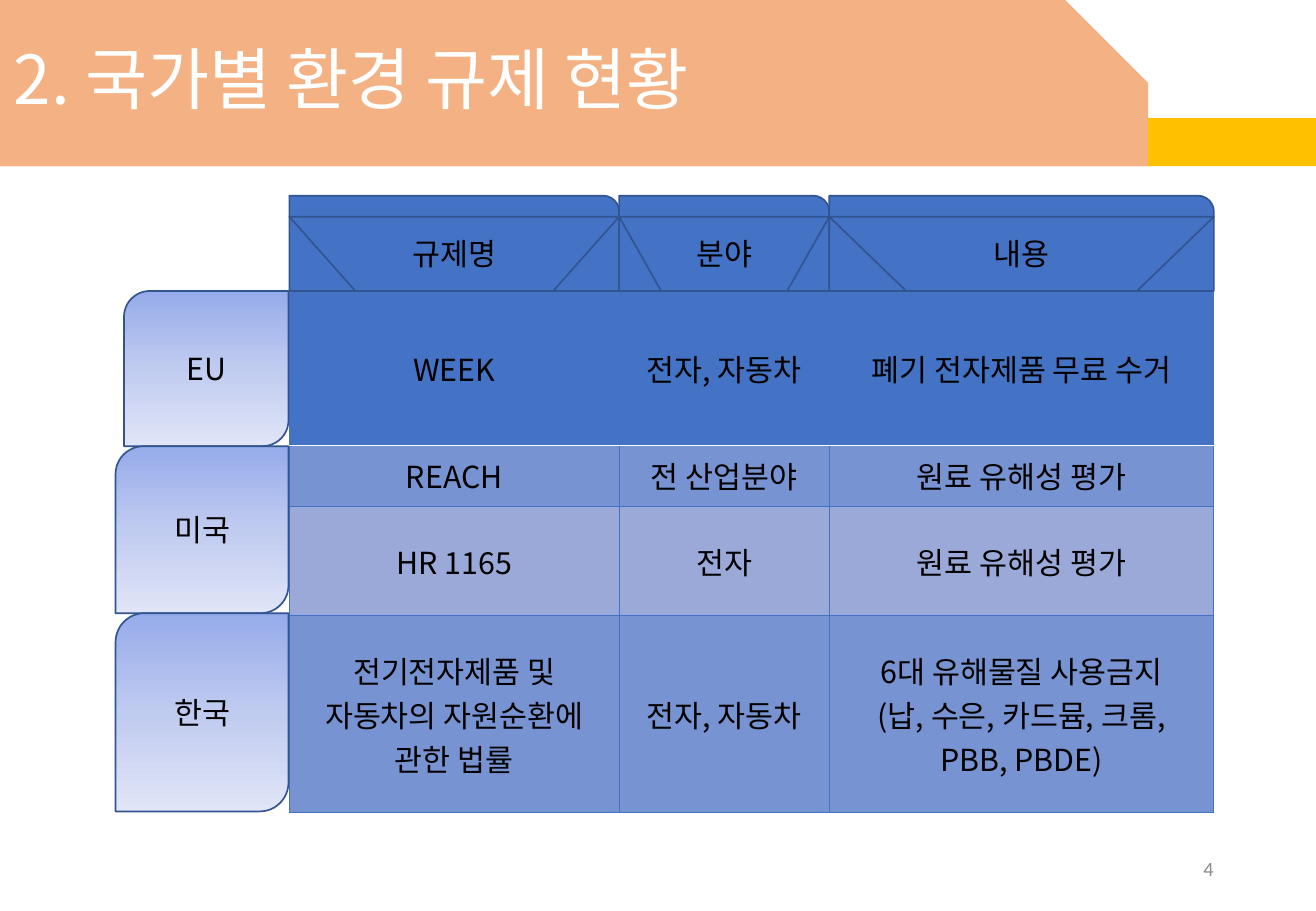
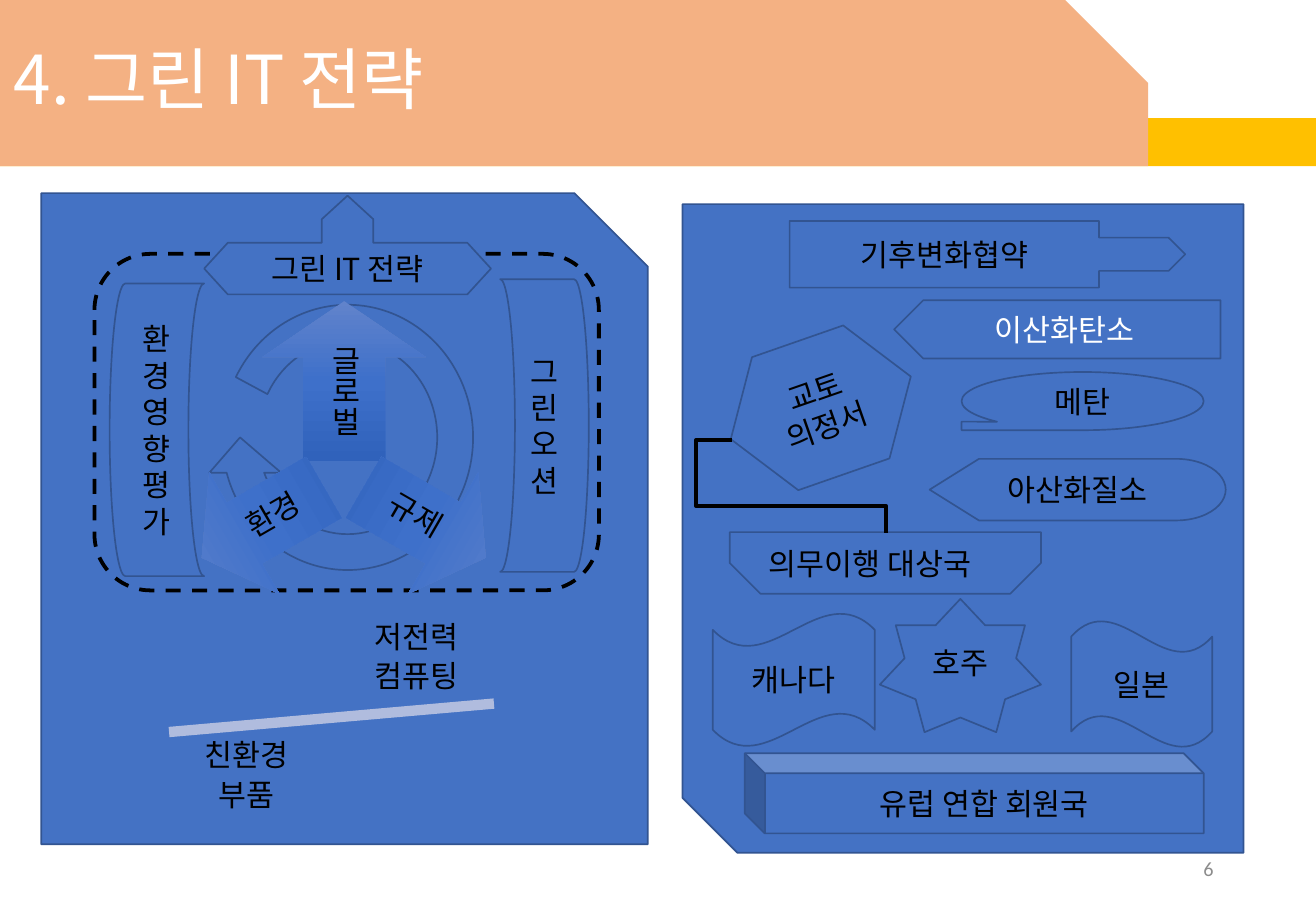
from copy import deepcopy
from itertools import accumulate

from lxml import etree
from pptx import Presentation
from pptx.dml.color import RGBColor
from pptx.enum.dml import MSO_LINE
from pptx.enum.shapes import MSO_CONNECTOR, MSO_SHAPE
from pptx.enum.text import MSO_ANCHOR, MSO_AUTO_SIZE, PP_ALIGN
from pptx.oxml.ns import qn
from pptx.util import Pt

LEFT, CENTER, RIGHT = PP_ALIGN.LEFT, PP_ALIGN.CENTER, PP_ALIGN.RIGHT
TOP, MIDDLE = MSO_ANCHOR.TOP, MSO_ANCHOR.MIDDLE
DASH = MSO_LINE.DASH
RECT, ROUNDED = MSO_SHAPE.RECTANGLE, MSO_SHAPE.ROUNDED_RECTANGLE
SNIP, SNIP_SAME = MSO_SHAPE.SNIP_1_RECTANGLE, MSO_SHAPE.SNIP_2_SAME_RECTANGLE
ROUND_ONE, ROUND_DIAG = MSO_SHAPE.ROUND_1_RECTANGLE, MSO_SHAPE.ROUND_2_DIAG_RECTANGLE
TRAPEZOID = MSO_SHAPE.FLOWCHART_MANUAL_OPERATION
STORAGE, TAPE = MSO_SHAPE.FLOWCHART_STORED_DATA, MSO_SHAPE.FLOWCHART_SEQUENTIAL_ACCESS_STORAGE
DISPLAY, CUBE, WAVE = MSO_SHAPE.FLOWCHART_DISPLAY, MSO_SHAPE.CUBE, MSO_SHAPE.WAVE
STAR, HEXAGON, HOME_PLATE = MSO_SHAPE.STAR_7_POINT, MSO_SHAPE.HEXAGON, MSO_SHAPE.PENTAGON
UP, DOWN, MINUS = MSO_SHAPE.UP_ARROW, MSO_SHAPE.DOWN_ARROW, MSO_SHAPE.MATH_MINUS
TRIPLE, CIRCULAR = MSO_SHAPE.LEFT_RIGHT_UP_ARROW, MSO_SHAPE.CIRCULAR_ARROW
CALLOUT = MSO_SHAPE.RIGHT_ARROW_CALLOUT
ELBOW = MSO_CONNECTOR.ELBOW

KR, LATIN = "Noto Sans CJK KR", "Calibri"
BLUE, EDGE, BLACK, WHITE = "4472C4", "325491", "000000", "FFFFFF"
ORANGE, YELLOW, GREY, PALE = "F4B183", "FFC000", "8C8C8C", "B0BCDE"
TAB_GRADIENT = ("96ABEA", "C0CBF0", "E0E5F7")
ARROW_GRADIENT = ("6183CB", "3E70CA", "3062BB")

# Regulation table
HEADERS = ["규제명", "분야", "내용"]
REGULATIONS = [
    ["WEEK", "전자, 자동차", "폐기 전자제품 무료 수거"],
    ["REACH", "전 산업분야", "원료 유해성 평가"],
    ["HR 1165", "전자", "원료 유해성 평가"],
    ["전기전자제품 및 자동차의 자원순환에 관한 법률", "전자, 자동차",
     "6대 유해물질 사용금지\n(납, 수은, 카드뮴, 크롬, PBB, PBDE)"],
]
ROW_FILLS = [BLUE, "7893D1", "9BA9D9", "7893D1"]
COL_WIDTHS = [195.5, 124.5, 228]
ROW_HEIGHTS = [91.5, 36, 65, 116.5]
TABLE_X, TABLE_Y = 171.5, 172.5
COUNTRIES = [("EU", 97.5, 92), ("미국", 102.5, 99), ("한국", 102.5, 117.5)]

# Strategy panels: shape, left, top, width, height, text, format
GLOBAL_ARROW = dict(fill=ARROW_GRADIENT, line=None, adj=(0.5, 0.35))
STRATEGY = [
    (SNIP, 24.5, 114.5, 359.5, 386, "", dict(adj=(0.121,))),
    (ROUNDED, 56, 150.5, 299, 199.5, "", dict(line=BLACK, width=2.25, dash=DASH)),
    (TRIPLE, 121, 116, 170, 58.5, "그린 IT 전략", dict(adj=(0.522, 0.261, 0.239))),
    (MINUS, 65, 412.5, 263, 26, "", dict(fill=PALE, line=None, rot=355)),
    (DOWN, 96, 371, 79, 49, "", dict(line=None)),
    (UP, 217.5, 431.5, 79, 49, "", dict(line=None)),
    (STORAGE, 65, 168, 56, 173.5, "환경영향평가", {}),
    (STORAGE, 296.5, 165.5, 52.5, 173.5, "그린오션", dict(flip="flipH")),
    (CIRCULAR, 121, 170, 170, 178.5, "",
     dict(rot=180, adj=(0.125, 11.423, 204.577, 17.002, 0.125))),
    (UP, 155.5, 178.5, 97, 95, "", GLOBAL_ARROW),
    (UP, 210, 268, 83.5, 83.5, "", dict(GLOBAL_ARROW, rot=120)),
    (UP, 114, 268, 83.5, 83.5, "", dict(GLOBAL_ARROW, rot=240)),
]
STRATEGY_LABELS = [
    (204.5, 364.5, 85, 51, "저전력\n컴퓨팅", {}),
    (103.5, 435, 85, 51, "친환경\n부품", {}),
    (179, 195, 49, 78.5, "글로벌", dict(vert="eaVert")),
    (211.5, 285, 69, 42, "규제", dict(rot=30)),
    (127.5, 285, 69, 42, "환경", dict(rot=330)),
]
CLIMATE = [
    (SNIP, 404.5, 121, 332.5, 384.5, "", dict(rot=180, adj=(0.098,))),
    (CALLOUT, 468, 131, 234.5, 39.5, "기후변화협약", dict(adj=(0.5, 0.25, 0.25, 0.782))),
    (HOME_PLATE, 530, 178, 193.5, 34.5, "이산화탄소", dict(flip="flipH", color=WHITE)),
    (HEXAGON, 430, 200, 113, 83.5, "교토\n의정서", dict(rot=340.8, adj=(0.334,))),
    (SNIP_SAME, 432.5, 315.5, 184.5, 36.5, "", dict(flip="flipV", adj=(0.5, 0))),
    (TAPE, 570, 220.5, 143.5, 34.5, "메탄", dict(flip="flipH")),
    (DISPLAY, 551, 272, 175.5, 36.5, "아산화질소", {}),
    (STAR, 521.5, 355, 95.5, 79, "호주", {}),
    (WAVE, 635, 368, 83.5, 75, "일본", {}),
    (WAVE, 422.5, 363.5, 96, 79, "캐나다", dict(flip="flipH")),
    (CUBE, 441.5, 446.5, 272, 47.5, "유럽 연합 회원국", dict(flip="flipH")),
]


def rgb(hex_color):
    return RGBColor.from_string(hex_color)


def pts(*values):
    return [Pt(v) for v in values]


def write(tf, text, size=18, color=BLACK, font=KR, align=CENTER, anchor=MIDDLE,
          spacing=None, after=None):
    """Fill a text frame, one paragraph for each line of text."""
    tf.vertical_anchor = anchor
    for i, line in enumerate(text.split("\n")):
        p = tf.add_paragraph() if i else tf.paragraphs[0]
        p.alignment = align
        if spacing:
            p.line_spacing = spacing
        if after:
            p.space_after = Pt(after)
        r = p.add_run()
        r.text = line
        r.font.size, r.font.name, r.font.bold = Pt(size), font, False
        r.font.color.rgb = rgb(color)
        etree.SubElement(r.font._element, qn("a:ea")).set("typeface", font)


def paint(sp, fill):
    """Fill with one colour, or with a top-to-bottom gradient of three."""
    if isinstance(fill, str):
        sp.fill.solid()
        sp.fill.fore_color.rgb = rgb(fill)
        return
    sp.fill.gradient()
    sp.fill.gradient_angle = 270
    stops = next(sp.element.iter(qn("a:gsLst")))
    stops.append(deepcopy(stops[0]))
    for i, (stop, color) in enumerate(zip(sp.fill.gradient_stops, fill)):
        stop.position = i / 2
        stop.color.rgb = rgb(color)


def draw(shapes, kind, x, y, w, h, text="", fill=BLUE, line=EDGE, width=1, dash=None,
         adj=(), rot=0, flip=None, **fmt):
    sp = shapes.add_shape(kind, *pts(x, y, w, h))
    sp.shadow.inherit = False
    paint(sp, fill)
    if line:
        sp.line.color.rgb = rgb(line)
        sp.line.width = Pt(width)
        if dash:
            sp.line.dash_style = dash
    else:
        sp.line.fill.background()
    for i, value in enumerate(adj):
        sp.adjustments[i] = value
    sp.rotation = rot
    if flip:
        sp.element.spPr.find(qn("a:xfrm")).set(flip, "1")
    if text:
        write(sp.text_frame, text, **fmt)
    return sp


def label(shapes, x, y, w, h, text, inset=None, rot=0, vert=None, wrap=True, **fmt):
    sp = shapes.add_textbox(*pts(x, y, w, h))
    sp.rotation = rot
    tf = sp.text_frame
    tf.word_wrap = wrap
    tf.auto_size = MSO_AUTO_SIZE.NONE if wrap else MSO_AUTO_SIZE.SHAPE_TO_FIT_TEXT
    if inset:
        tf.margin_left = tf.margin_right = tf.margin_top = tf.margin_bottom = Pt(inset)
    if vert:
        tf._txBody.find(qn("a:bodyPr")).set("vert", vert)
    write(tf, text, **fmt)


def add_bands(layout, s):
    """Draw the header bands and place them behind the layout's placeholders."""
    bands = [draw(s.shapes, RECT, 0, 70, 780, 28.5, fill=YELLOW, line=None),
             draw(s.shapes, SNIP, 0, 0, 680.5, 98.5, fill=ORANGE, line=None, adj=(0.5,))]
    for i, sp in enumerate(bands):
        sp.element.nvSpPr.cNvPr.set("id", str(20 + i))
        layout.shapes.element.insert(2 + i, sp.element)


def add_slide(prs, layout, title, number):
    s = prs.slides.add_slide(layout)
    sp = s.shapes.title
    sp.left, sp.top, sp.width, sp.height = pts(1, 0, 658.5, 98.5)
    write(sp.text_frame, title, size=40, color=WHITE, align=LEFT, spacing=0.9)
    label(s.shapes, 551, 500.5, 175.5, 29, number, size=12, color=GREY, font=LATIN,
          align=RIGHT)
    return s


def set_borders(cell, **edges):
    """Set cell borders, given as L, R, T, B = (colour, width)."""
    tc_pr = cell._tc.get_or_add_tcPr()
    for i, (side, (color, width)) in enumerate(edges.items()):
        ln = etree.Element(qn(f"a:ln{side}"), w=str(Pt(width)))
        fill = etree.SubElement(ln, qn("a:solidFill"))
        etree.SubElement(fill, qn("a:srgbClr"), val=color)
        tc_pr.insert(i, ln)


def add_regulations(s):
    frame = s.shapes.add_table(len(REGULATIONS), len(HEADERS), *pts(
        TABLE_X, TABLE_Y, sum(COL_WIDTHS), sum(ROW_HEIGHTS)))
    table = frame.table
    table.first_row = table.horz_banding = False
    for col, w in zip(table.columns, COL_WIDTHS):
        col.width = Pt(w)
    thin, divider = (BLUE, 0.5), (WHITE, 1)
    for i, texts in enumerate(REGULATIONS):
        table.rows[i].height = Pt(ROW_HEIGHTS[i])
        for j, text in enumerate(texts):
            cell = table.cell(i, j)
            paint(cell, ROW_FILLS[i])
            set_borders(cell, L=thin, R=thin, T=divider if i == 1 else thin,
                        B=divider if i == 0 else thin)
            write(cell.text_frame, text)
            cell.vertical_anchor = MIDDLE

    lefts = list(accumulate(COL_WIDTHS, initial=TABLE_X))
    for x, w in zip(lefts, COL_WIDTHS):
        draw(s.shapes, ROUND_ONE, x, 116, w, 56.5)
    for x, w, text in zip(lefts, COL_WIDTHS, HEADERS):
        draw(s.shapes, TRAPEZOID, x, 128.5, w, 44, text)

    y = TABLE_Y
    for country, w, h in COUNTRIES:
        draw(s.shapes, ROUND_DIAG, TABLE_X - 0.5 - w, y, w, h, country, fill=TAB_GRADIENT)
        y += h


def add_panel(s, items):
    shapes = s.shapes.add_group_shape().shapes
    for kind, x, y, w, h, text, fmt in items:
        draw(shapes, kind, x, y, w, h, text, **fmt)
    return shapes


def add_bent_line(shapes, x, y, w, h):
    """Lead from the protocol hexagon round to the box of bound countries."""
    c = shapes.add_connector(ELBOW, *pts(x, y, x + w, y + h))
    c.line.color.rgb = rgb(BLACK)
    c.line.width = Pt(2.25)
    sp_pr = c._element.spPr
    etree.SubElement(sp_pr, qn("a:effectLst"))
    xfrm = sp_pr.find(qn("a:xfrm"))
    xfrm.set("rot", str(270 * 60000))
    xfrm.set("flipV", "1")
    geom = sp_pr.find(qn("a:prstGeom"))
    geom.set("prst", "bentConnector4")
    guides = geom.find(qn("a:avLst"))
    for name, value in (("adj1", 28600), ("adj2", 123100)):
        etree.SubElement(guides, qn("a:gd"), name=name, fmla=f"val {value}")


def main():
    prs = Presentation()
    prs.slide_width, prs.slide_height = pts(780, 540)
    layout = prs.slide_layouts[5]

    s = add_slide(prs, layout, "2. 국가별 환경 규제 현황", "4")
    add_bands(layout, s)
    add_regulations(s)

    s = add_slide(prs, layout, "4. 그린 IT 전략", "6")
    strategy = add_panel(s, STRATEGY)
    for x, y, w, h, text, fmt in STRATEGY_LABELS:
        label(strategy, x, y, w, h, text, inset=10, spacing=0.9, after=4, **fmt)
    climate = add_panel(s, CLIMATE)
    add_bent_line(climate, 452, 242.5, 55, 91.5)
    label(climate, 448.5, 319.5, 147.5, 29, "의무이행 대상국", wrap=False, align=LEFT,
          anchor=TOP)
    prs.save("out.pptx")


if __name__ == "__main__":
    main()
